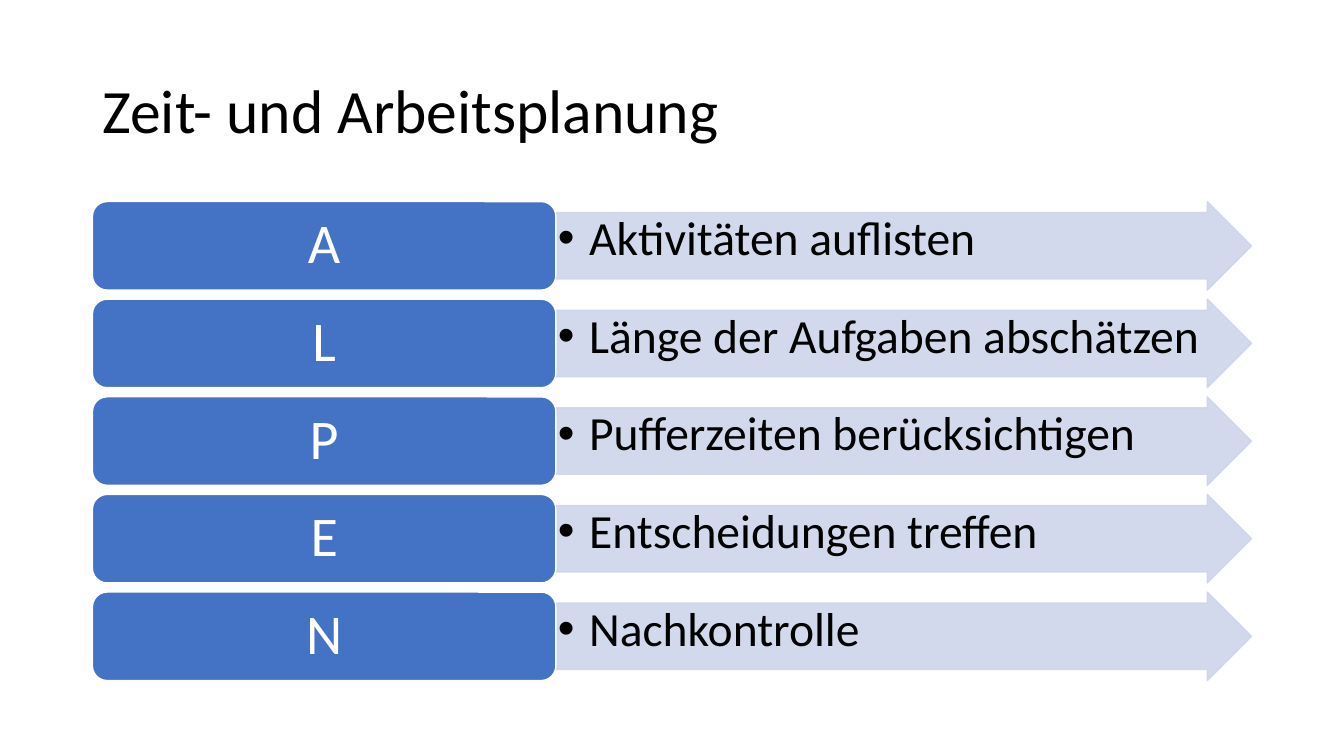
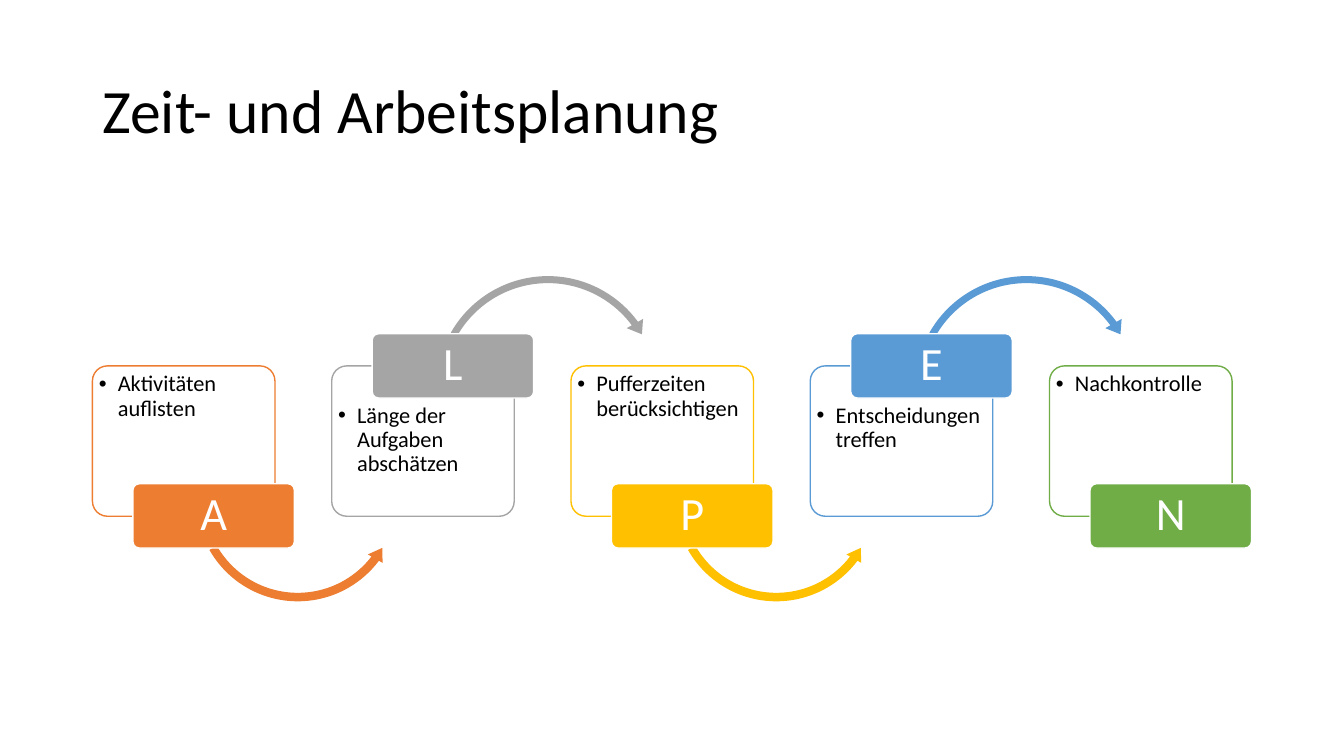
from lxml import etree
from pptx import Presentation
from pptx.dml.color import RGBColor
from pptx.enum.shapes import MSO_SHAPE
from pptx.enum.text import MSO_ANCHOR, MSO_AUTO_SIZE, PP_ALIGN
from pptx.oxml.ns import qn
from pptx.util import Cm, Pt

ROUND = MSO_SHAPE.ROUNDED_RECTANGLE
RIGHT = MSO_SHAPE.RIGHT_ARROW
OVER = MSO_SHAPE.CIRCULAR_ARROW
UNDER = MSO_SHAPE.LEFT_CIRCULAR_ARROW
TOP, MIDDLE = MSO_ANCHOR.TOP, MSO_ANCHOR.MIDDLE
LEFT, CENTER = PP_ALIGN.LEFT, PP_ALIGN.CENTER

FONT = "Calibri"
TITLE = "Zeit- und Arbeitsplanung"
HUES = {
    "text": "000000",
    "white": "FFFFFF",
    "blue": "4472C4",
    "pale": "CFD5EA",
    "A": "ED7D31",
    "L": "A5A5A5",
    "P": "FFC000",
    "E": "5B9BD5",
    "N": "70AD47",
}
STEPS = [
    ("A", "Aktivitäten auflisten"),
    ("L", "Länge der Aufgaben abschätzen"),
    ("P", "Pufferzeiten berücksichtigen"),
    ("E", "Entscheidungen treffen"),
    ("N", "Nachkontrolle"),
]


def draw(slide, kind, box, fill, line=None, adjust=(), clear=()):
    shape = slide.shapes.add_shape(kind, *[Cm(n) for n in box])
    shape.shadow.inherit = False
    for i, value in enumerate(adjust):
        shape.adjustments[i] = value
    shape.fill.solid()
    shape.fill.fore_color.rgb = RGBColor.from_string(HUES[fill])
    if line:
        shape.line.color.rgb = RGBColor.from_string(HUES[line])
        shape.line.width = Pt(1)
    else:
        shape.line.fill.background()
    props = shape._element.spPr
    for part in clear:
        color = props.find(part + "/" + qn("a:solidFill") + "/" + qn("a:srgbClr"))
        etree.SubElement(color, qn("a:alpha"), val="90000")
    return shape


def write(shape, text, size, hue, align, anchor, pads, indent=0):
    frame = shape.text_frame
    frame.word_wrap = True
    frame.auto_size = MSO_AUTO_SIZE.NONE
    frame.vertical_anchor = anchor
    frame.margin_left, frame.margin_top, frame.margin_right, frame.margin_bottom = [
        Cm(n) for n in pads
    ]
    para = frame.paragraphs[0]
    para.alignment = align
    para.line_spacing = 0.9
    run = para.add_run()
    run.text = text
    run.font.name = FONT
    run.font.size = Pt(size)
    run.font.color.rgb = RGBColor.from_string(HUES[hue])
    if indent:
        props = para._p.get_or_add_pPr()
        props.set("marL", str(Cm(indent)))
        props.set("indent", str(-Cm(indent)))
        etree.SubElement(props, qn("a:buFont"), typeface="Arial")
        etree.SubElement(props, qn("a:buChar"), char="•")


deck = Presentation()
deck.slide_width, deck.slide_height = Cm(33.87), Cm(19.05)

slides = []
for _ in range(2):
    slide = deck.slides.add_slide(deck.slide_layouts[5])
    title = slide.shapes.title
    title.left, title.top = Cm(2.33), Cm(1.01)
    title.width, title.height = Cm(29.21), Cm(3.68)
    write(title, TITLE, 44, "text", LEFT, MIDDLE, (0.25, 0.13, 0.25, 0.13))
    slides.append(slide)
rows, flow = slides

for i, (key, text) in enumerate(STEPS):
    y = 5.08 + 2.46 * i
    arrow = draw(rows, RIGHT, (14.01, y, 17.53, 2.23), "pale", "pale",
                 (0.75, 0.5), (".", qn("a:ln")))
    write(arrow, text, 34, "text", LEFT, TOP, (0.05, 0.05, 0.05, 0.05), 0.79)
    label = draw(rows, ROUND, (2.33, y, 11.68, 2.23), "blue", "white")
    write(label, key, 40, "white", CENTER, MIDDLE, (0.43, 0.2, 0.43, 0.2))

for i, (key, text) in enumerate(STEPS):
    x = 2.33 + 6.03 * i
    high = i % 2 == 1
    card = draw(flow, ROUND, (x, 9.22, 4.6, 3.79), "white", key, (0.1,), (".",))
    write(card, text, 16, "text", LEFT, TOP,
          (0.05, 0.85 if high else 0.06, 0.05, 0.05), 0.48)
    if i < len(STEPS) - 1:
        if high:
            draw(flow, OVER, (x + 2.49, 6.81, 5.92, 5.92), key,
                 adjust=(0.03, 4.09, 194.16, 125.76, 0.04))
        else:
            draw(flow, UNDER, (x + 2.51, 9.93, 5.33, 5.33), key,
                 adjust=(0.04, 4.57, 22.33, 90.25, 0.04))
    label = draw(flow, ROUND, (x + 1.02, 8.41 if high else 12.19, 4.07, 1.62),
                 key, "white", (0.1,))
    write(label, key, 33, "white", CENTER, MIDDLE, (0.18, 0.13, 0.18, 0.13))

deck.save("out.pptx")
